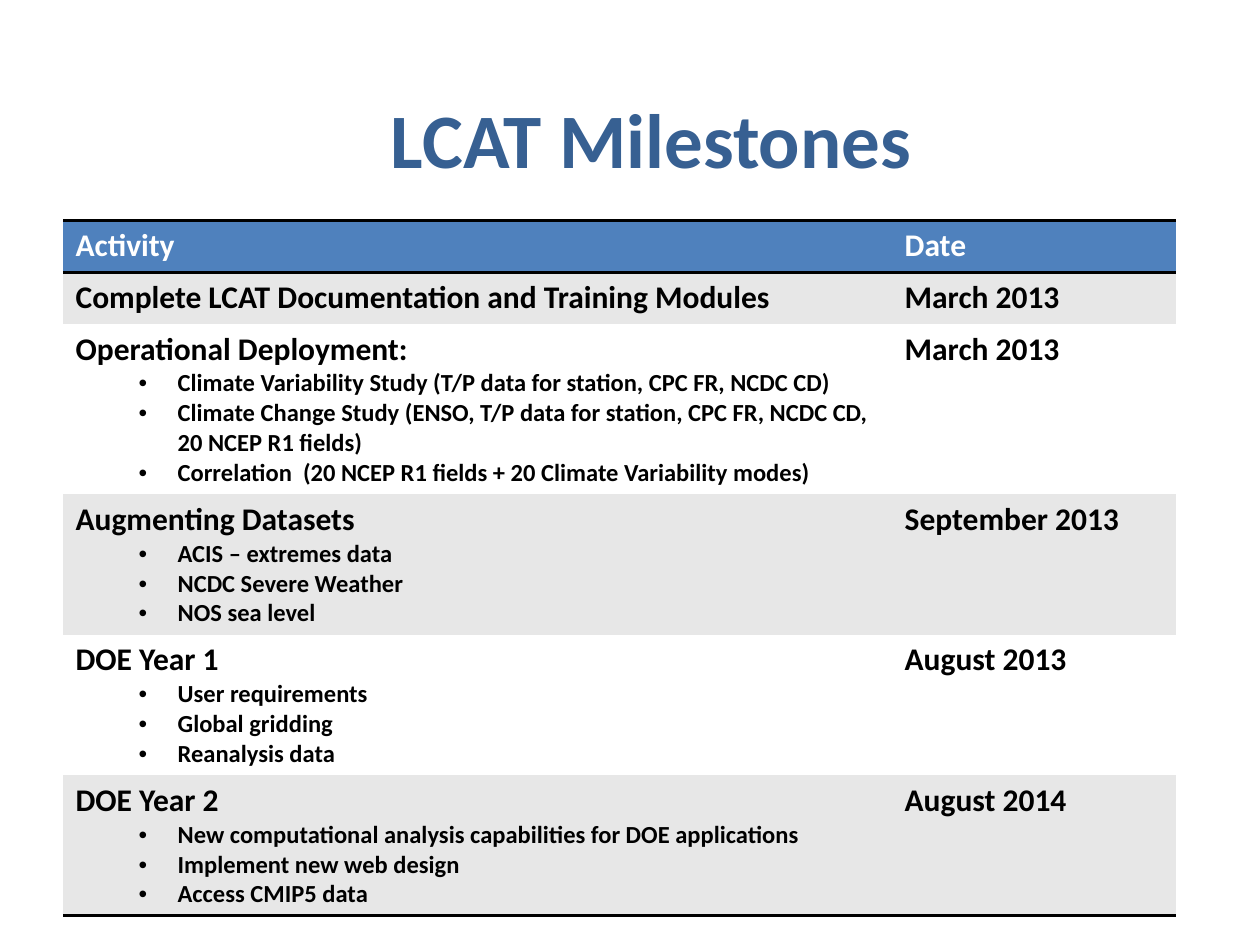
import dataclasses

import pptx
import pptx.dml.color
import pptx.enum.text
import pptx.oxml
import pptx.oxml.ns
import pptx.util

Inches = pptx.util.Inches
Pt = pptx.util.Pt


@dataclasses.dataclass(frozen=True)
class Theme:
    font: str = "Calibri"
    title: str = "376092"
    header: str = "4F81BD"
    header_text: str = "FFFFFF"
    text: str = "000000"
    rule: str = "000000"
    bands: tuple = ("E7E7E7", "FFFFFF")
    title_size: int = 44
    body_size: int = 18
    detail_size: int = 14
    rule_width: int = 2


THEME = Theme()
NO_GRID_STYLE = "{2D5ABB26-0587-4C30-8999-92F81FD0307C}"

# Activity, date, details
MILESTONES = [
    ("Complete LCAT Documentation and Training Modules", "March 2013", []),
    ("Operational Deployment:", "March 2013", [
        "Climate Variability Study (T/P data for station, CPC FR, NCDC CD)",
        "Climate Change Study (ENSO, T/P data for station, CPC FR, NCDC CD, 20 NCEP R1 fields)",
        "Correlation  (20 NCEP R1 fields + 20 Climate Variability modes)",
    ]),
    ("Augmenting Datasets", "September 2013", [
        "ACIS – extremes data", "NCDC Severe Weather", "NOS sea level",
    ]),
    ("DOE Year 1", "August 2013", [
        "User requirements", "Global gridding", "Reanalysis data",
    ]),
    ("DOE Year 2", "August 2014", [
        "New computational analysis capabilities for DOE applications",
        "Implement new web design",
        "Access CMIP5 data",
    ]),
]


def rgb(value):
    return pptx.dml.color.RGBColor.from_string(value)


def write(paragraph, text, size=THEME.body_size, color=THEME.text, align=None, bullet=False):
    """Add one formatted bold run to a paragraph."""
    run = paragraph.add_run()
    run.text = text
    run.font.name = THEME.font
    run.font.size = Pt(size)
    run.font.bold = True
    run.font.color.rgb = rgb(color)
    if align is not None:
        paragraph.alignment = align
    if bullet:
        properties = paragraph._p.get_or_add_pPr()
        properties.set("marL", str(Inches(0.81)))
        properties.set("indent", str(Inches(-0.31)))
        namespace = pptx.oxml.ns.nsdecls("a")
        for xml in (f'<a:buFont {namespace} typeface="Arial"/>',
                    f'<a:buChar {namespace} char="•"/>'):
            properties.append(pptx.oxml.parse_xml(xml))


def format_cell(cell, fill, rules=()):
    """Fill a cell and rule the named edges, given in the order lnT, lnB."""
    cell.fill.solid()
    cell.fill.fore_color.rgb = rgb(fill)
    for position, edge in enumerate(rules):
        line = pptx.oxml.parse_xml(
            f'<a:{edge} {pptx.oxml.ns.nsdecls("a")} w="{Pt(THEME.rule_width)}">'
            f'<a:solidFill><a:srgbClr val="{THEME.rule}"/></a:solidFill></a:{edge}>')
        cell._tc.get_or_add_tcPr().insert(position, line)


def place_title(slide, text, left, top, width, height):
    title = slide.shapes.title
    title.left, title.top, title.width, title.height = left, top, width, height
    frame = title.text_frame
    frame.vertical_anchor = pptx.enum.text.MSO_ANCHOR.MIDDLE
    write(frame.paragraphs[0], text, size=THEME.title_size, color=THEME.title,
          align=pptx.enum.text.PP_ALIGN.CENTER)


def place_milestones(slide, left, top, width, row_height, date_width):
    row_count = len(MILESTONES) + 1
    frame = slide.shapes.add_table(row_count, 2, left, top, width, row_height * row_count)
    table = frame.table
    table._tbl.tblPr.find(pptx.oxml.ns.qn("a:tableStyleId")).text = NO_GRID_STYLE
    table.horz_banding = False
    table.columns[0].width = width - date_width
    table.columns[1].width = date_width

    # Header
    for column, heading in enumerate(("Activity", "Date")):
        cell = table.cell(0, column)
        write(cell.text_frame.paragraphs[0], heading, color=THEME.header_text)
        format_cell(cell, THEME.header, ("lnT", "lnB"))

    # Milestones, on alternating bands
    for row, (activity, date, details) in enumerate(MILESTONES, start=1):
        rules = ("lnB",) if row == len(MILESTONES) else ()
        for column, text in enumerate((activity, date)):
            cell = table.cell(row, column)
            write(cell.text_frame.paragraphs[0], text)
            format_cell(cell, THEME.bands[(row - 1) % 2], rules)
        for detail in details:
            write(table.cell(row, 0).text_frame.add_paragraph(), detail,
                  size=THEME.detail_size, bullet=True)


def main():
    deck = pptx.Presentation()
    deck.slide_width, deck.slide_height = Inches(10), Inches(7.5)
    title_only = deck.slide_layouts[5]
    slide = deck.slides.add_slide(title_only)
    place_title(slide, "LCAT Milestones", Inches(0.67), Inches(0.47), Inches(9), Inches(1.25))
    place_milestones(slide, Inches(0.5), Inches(1.75), Inches(8.83),
                     row_height=Inches(0.41), date_width=Inches(2.25))
    deck.save("out.pptx")


if __name__ == "__main__":
    main()
